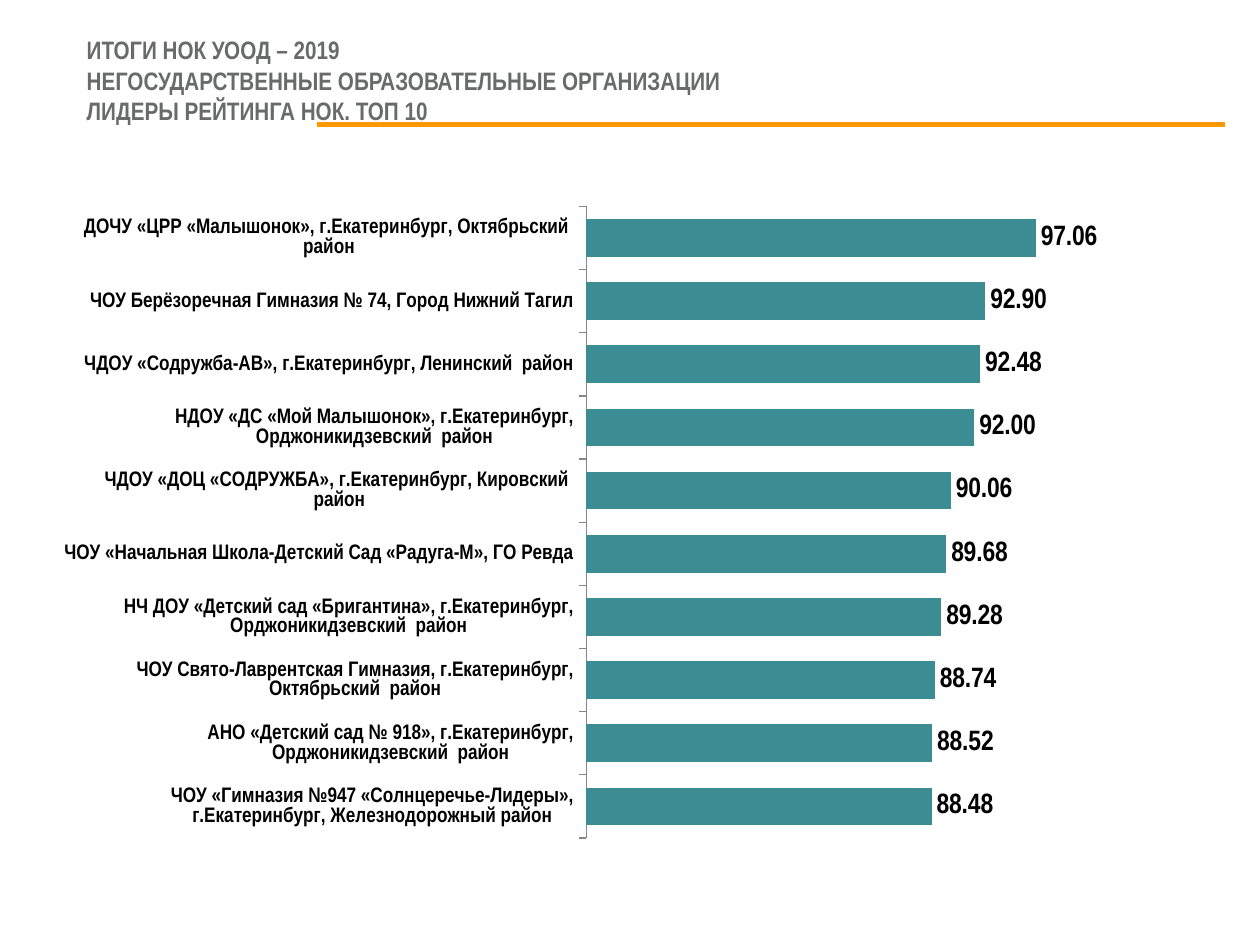
from dataclasses import dataclass

from lxml.etree import SubElement
from pptx import Presentation
from pptx.chart.data import CategoryChartData
from pptx.dml.color import RGBColor
from pptx.enum.chart import XL_CHART_TYPE as ChartType
from pptx.enum.chart import XL_LABEL_POSITION as LabelPosition
from pptx.enum.chart import XL_TICK_LABEL_POSITION as TickLabels
from pptx.enum.chart import XL_TICK_MARK as TickMark
from pptx.enum.shapes import MSO_CONNECTOR as Connector
from pptx.enum.text import MSO_ANCHOR as Anchor
from pptx.oxml import parse_xml
from pptx.oxml.ns import nsdecls, qn
from pptx.util import Inches, Pt

TITLE = [
    "ИТОГИ НОК УООД – 2019",
    "НЕГОСУДАРСТВЕННЫЕ ОБРАЗОВАТЕЛЬНЫЕ ОРГАНИЗАЦИИ",
    "ЛИДЕРЫ РЕЙТИНГА НОК. ТОП 10",
]
RATING = [
    ("ДОЧУ «ЦРР «Малышонок», г.Екатеринбург, Октябрьский  район", 97.06),
    ("ЧОУ Берёзоречная Гимназия № 74, Город Нижний Тагил", 92.90),
    ("ЧДОУ «Содружба-АВ», г.Екатеринбург, Ленинский  район", 92.48),
    ("НДОУ «ДС «Мой Малышонок», г.Екатеринбург, Орджоникидзевский  район", 92.00),
    ("ЧДОУ «ДОЦ «СОДРУЖБА», г.Екатеринбург, Кировский  район", 90.06),
    ("ЧОУ «Начальная Школа-Детский Сад «Радуга-М», ГО Ревда", 89.68),
    ("НЧ ДОУ «Детский сад «Бригантина», г.Екатеринбург, Орджоникидзевский  район", 89.28),
    ("ЧОУ Свято-Лаврентская Гимназия, г.Екатеринбург, Октябрьский  район", 88.74),
    ("АНО «Детский сад № 918», г.Екатеринбург, Орджоникидзевский  район", 88.52),
    ("ЧОУ «Гимназия №947 «Солнцеречье-Лидеры», г.Екатеринбург, Железнодорожный район", 88.48),
]
PLOT_AREA = {"x": 0.46, "y": 0.045, "w": 0.43, "h": 0.91}


@dataclass(frozen=True)
class Theme:
    font: str = "Arial Narrow"
    title: str = "696B6B"
    rule: str = "FF9900"
    bar: str = "3C8C93"
    axis: str = "868686"
    text: str = "000000"
    title_size: float = 14.4
    chart_size: float = 14
    category_size: float = 12
    value_size: float = 16


THEME = Theme()


def style_font(font, size, color=THEME.text, bold=False):
    font.name, font.size, font.bold = THEME.font, Pt(size), bold
    font.color.rgb = RGBColor.from_string(color)


def add_text(page, lines, at, **style):
    box = page.shapes.add_textbox(*map(Inches, at))
    frame = box.text_frame
    frame.word_wrap = True
    frame.vertical_anchor = Anchor.MIDDLE
    para = frame.paragraphs[0]
    for index, line in enumerate(lines):
        if index:
            para.add_line_break()
        span = para.add_run()
        span.text = line
        style_font(span.font, **style)


def add_rule(page, left, right, top):
    rule = page.shapes.add_connector(
        Connector.STRAIGHT, Inches(left), Inches(top), Inches(right), Inches(top)
    )
    rule.line.color.rgb = RGBColor.from_string(THEME.rule)
    rule.line.width = Pt(3)
    SubElement(rule.element.spPr, qn("a:effectLst"))


def place_plot(chart, area):
    modes = '<c:layoutTarget val="inner"/><c:xMode val="edge"/><c:yMode val="edge"/>'
    sizes = "".join(f'<c:{key} val="{value}"/>' for key, value in area.items())
    layout = parse_xml(
        f'<c:layout {nsdecls("c")}><c:manualLayout>{modes}{sizes}</c:manualLayout></c:layout>'
    )
    plot_area = chart.element.find(".//" + qn("c:plotArea"))
    for old in plot_area.findall(qn("c:layout")):
        plot_area.remove(old)
    plot_area.insert(0, layout)


def add_rating(page, at):
    names, scores = zip(*RATING)
    data = CategoryChartData(number_format="#,##0.00")
    data.categories = names
    data.add_series("Series 1", scores)
    chart = page.shapes.add_chart(ChartType.BAR_CLUSTERED, *map(Inches, at), data).chart
    chart.has_legend = chart.has_title = False
    style_font(chart.font, THEME.chart_size)
    place_plot(chart, PLOT_AREA)

    categories = chart.category_axis
    categories.reverse_order = True
    categories.major_tick_mark = TickMark.OUTSIDE
    categories.tick_label_position = TickLabels.NEXT_TO_AXIS
    categories.format.line.color.rgb = RGBColor.from_string(THEME.axis)
    style_font(categories.tick_labels.font, THEME.category_size, bold=True)

    values = chart.value_axis
    values.minimum_scale, values.maximum_scale, values.major_unit = 60, 100, 10
    values.has_major_gridlines = False
    values.visible = False

    plot = chart.plots[0]
    plot.gap_width = 68
    plot.vary_by_categories = False
    fill = plot.series[0].format.fill
    fill.solid()
    fill.fore_color.rgb = RGBColor.from_string(THEME.bar)

    labels = plot.series[0].data_labels
    labels.show_value = True
    labels.number_format = "#,##0.00"
    labels.number_format_is_linked = False
    labels.position = LabelPosition.OUTSIDE_END
    style_font(labels.font, THEME.value_size, bold=True)


def main():
    """Build the slide with the rating of non-state educational organisations."""
    deck = Presentation()
    deck.slide_width, deck.slide_height = Inches(10), Inches(7.5)
    page = deck.slides.add_slide(deck.slide_layouts[6])
    add_text(page, TITLE, (0.59, 0.35, 9, 0.57),
             size=THEME.title_size, color=THEME.title, bold=True)
    add_rule(page, 2.52, 9.72, 0.99)
    add_rating(page, (0.51, 1.39, 8.98, 5.51))
    deck.save("out.pptx")


if __name__ == "__main__":
    main()
